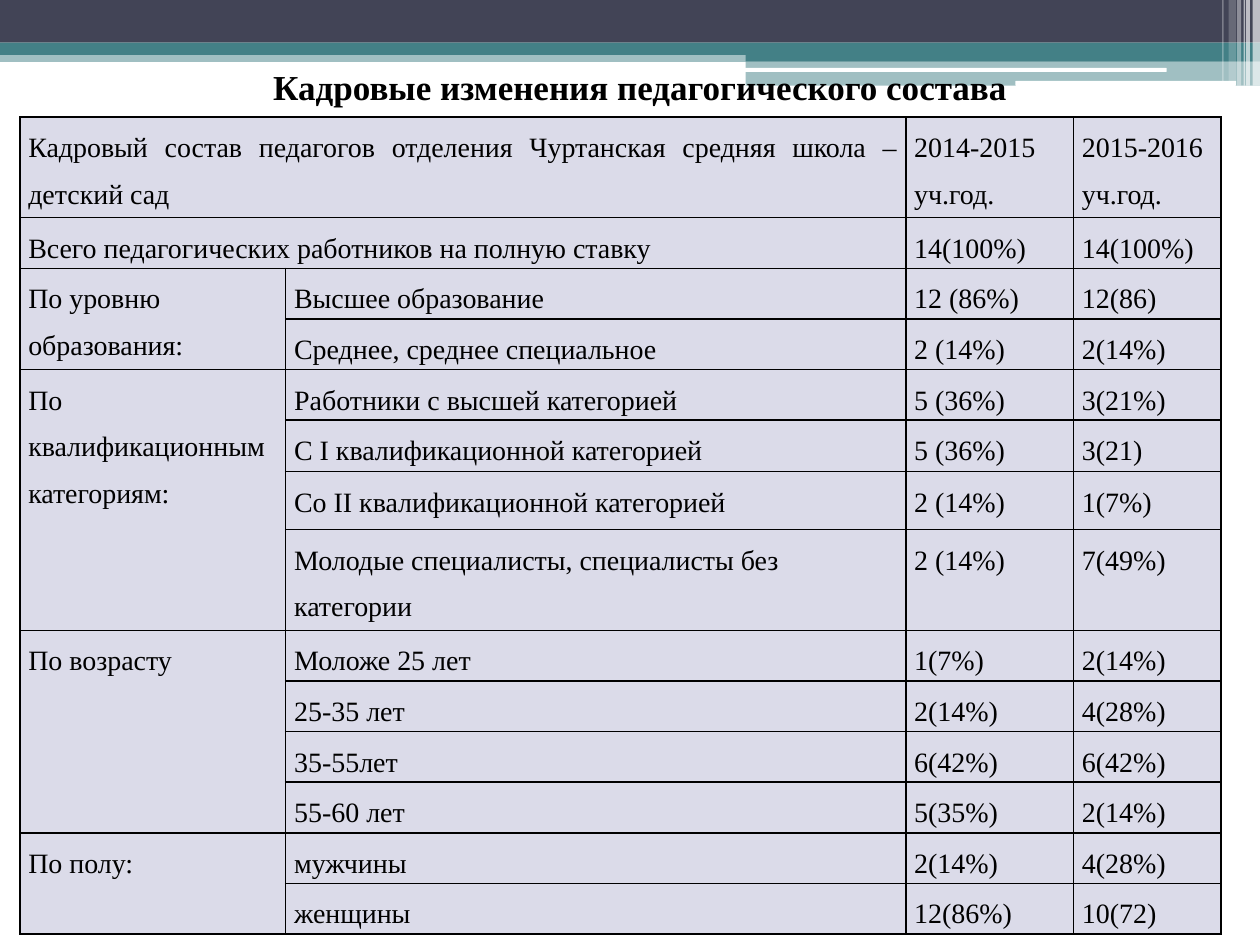
import pptx
import pptx.dml.color
import pptx.enum.shapes
import pptx.enum.text
import pptx.oxml.ns
import pptx.util
from lxml import etree
from pptx.util import Cm

WHITE = pptx.dml.color.RGBColor(0xFF, 0xFF, 0xFF)
BLACK = pptx.dml.color.RGBColor(0, 0, 0)
SLATE = pptx.dml.color.RGBColor(0x42, 0x44, 0x56)
TEAL = pptx.dml.color.RGBColor(0x43, 0x80, 0x86)
LAVENDER = pptx.dml.color.RGBColor(0xDB, 0xDB, 0xE9)
FONT = "Times New Roman"
RECT = pptx.enum.shapes.MSO_SHAPE.RECTANGLE
ROUNDED = pptx.enum.shapes.MSO_SHAPE.ROUNDED_RECTANGLE
ALIGN = pptx.enum.text.PP_ALIGN
qn = pptx.oxml.ns.qn


def style_text(paragraph, size, align, bold=False):
    paragraph.alignment = align
    paragraph.font.name = FONT
    paragraph.font.size = pptx.util.Pt(size)
    paragraph.font.bold = bold
    paragraph.font.color.rgb = BLACK


def add_borders(cell):
    """Draw a 1 pt black line on all four sides; call before setting the fill."""
    properties = cell._tc.get_or_add_tcPr()
    for side in ("a:lnL", "a:lnR", "a:lnT", "a:lnB"):
        line = etree.SubElement(properties, qn(side), w="12700")
        solid = etree.SubElement(line, qn("a:solidFill"))
        etree.SubElement(solid, qn("a:srgbClr"), val=str(BLACK))


deck = pptx.Presentation()
deck.slide_width, deck.slide_height = Cm(25.4), Cm(19.05)
slide = deck.slides.add_slide(deck.slide_layouts[6])

# Header bands: shape, left, top, width, height, colour, opacity in percent
bands = [
    (RECT, 0, 1.02, 25.4, 0.23, TEAL, 50),
    (RECT, 0, 0, 25.4, 0.86, SLATE, 100),
    (RECT, 0, 0.86, 25.4, 0.25, TEAL, 100),
    (RECT, 15.03, 0.98, 10.37, 0.25, TEAL, 100),
    (RECT, 15.03, 1.23, 10.37, 0.5, TEAL, 50),
    (ROUNDED, 15.01, 1.37, 8.51, 0.08, WHITE, 100),
    (ROUNDED, 20.47, 1.63, 4.45, 0.1, WHITE, 100),
]
# Thin stripes in the right corner: left, width, height, opacity
stripes = [
    (25.25, 0.15, 1.73, 65), (25.12, 0.08, 1.73, 65), (25.07, 0.03, 1.73, 60),
    (24.94, 0.08, 1.73, 40), (24.77, 0.15, 1.63, 20), (24.64, 0.03, 1.63, 30),
]
bands += [(RECT, left, 0, width, height, WHITE, opacity)
          for left, width, height, opacity in stripes]
for kind, left, top, width, height, colour, opacity in bands:
    band = slide.shapes.add_shape(kind, Cm(left), Cm(top), Cm(width), Cm(height))
    band.shadow.inherit = False
    band.line.fill.background()
    band.fill.solid()
    band.fill.fore_color.rgb = colour
    if opacity < 100:
        rgb = band._element.spPr.find(qn("a:solidFill")).find(qn("a:srgbClr"))
        etree.SubElement(rgb, qn("a:alpha"), val=str(opacity * 1000))

# Staff table
rows = [
    ("Кадровый состав педагогов отделения Чуртанская средняя школа – детский сад",
     "", "2014-2015 уч.год.", "2015-2016 уч.год."),
    ("Всего педагогических работников на полную ставку", "", "14(100%)", "14(100%)"),
    ("По уровню образования:", "Высшее образование", "12 (86%)", "12(86)"),
    ("", "Среднее, среднее специальное", "2 (14%)", "2(14%)"),
    ("По квалификационным категориям:", "Работники с высшей категорией",
     "5 (36%)", "3(21%)"),
    ("", "C I квалификационной категорией", "5 (36%)", "3(21)"),
    ("", "Со II квалификационной категорией", "2 (14%)", "1(7%)"),
    ("", "Молодые специалисты, специалисты без категории", "2 (14%)", "7(49%)"),
    ("По возрасту", "Моложе 25 лет", "1(7%)", "2(14%)"),
    ("", "25-35 лет", "2(14%)", "4(28%)"),
    ("", "35-55лет", "6(42%)", "6(42%)"),
    ("", "55-60 лет", "5(35%)", "2(14%)"),
    ("По полу:", "мужчины", "2(14%)", "4(28%)"),
    ("", "женщины", "12(86%)", "10(72)"),
]
left_aligned = {"По уровню образования:", "Молодые специалисты, специалисты без категории"}
column_widths = [5.36, 12.5, 3.38, 2.97]
row_heights = {0: 2.03, 5: 1.04, 6: 1.17, 7: 2.03}

staff = slide.shapes.add_table(len(rows), len(column_widths),
                               Cm(0.4), Cm(2.36), Cm(24.21), Cm(16.43)).table
staff.first_row = False
staff.horz_banding = False
for column, width in zip(staff.columns, column_widths):
    column.width = Cm(width)

for r, row in enumerate(rows):
    staff.rows[r].height = Cm(row_heights.get(r, 1.02))
    for c, text in enumerate(row):
        cell = staff.cell(r, c)
        cell.text = text
        cell.margin_left = cell.margin_right = Cm(0.17)
        cell.margin_top = cell.margin_bottom = 0
        add_borders(cell)
        cell.fill.solid()
        cell.fill.fore_color.rgb = LAVENDER
        paragraph = cell.text_frame.paragraphs[0]
        paragraph.line_spacing = 1.5
        style_text(paragraph, 16,
                   ALIGN.LEFT if text in left_aligned else ALIGN.JUSTIFY)

for r in (0, 1):
    staff.cell(r, 0).merge(staff.cell(r, 1))
for first, last in ((2, 3), (4, 7), (8, 11), (12, 13)):
    staff.cell(first, 0).merge(staff.cell(last, 0))

# Title
title = slide.shapes.add_textbox(Cm(1.4), Cm(1.19), Cm(23.01), Cm(1.12)).text_frame
title.word_wrap = True
title.auto_size = pptx.enum.text.MSO_AUTO_SIZE.SHAPE_TO_FIT_TEXT
title.vertical_anchor = pptx.enum.text.MSO_ANCHOR.MIDDLE
title.text = "Кадровые изменения педагогического состава"
style_text(title.paragraphs[0], 20, ALIGN.CENTER, bold=True)

deck.save("out.pptx")
